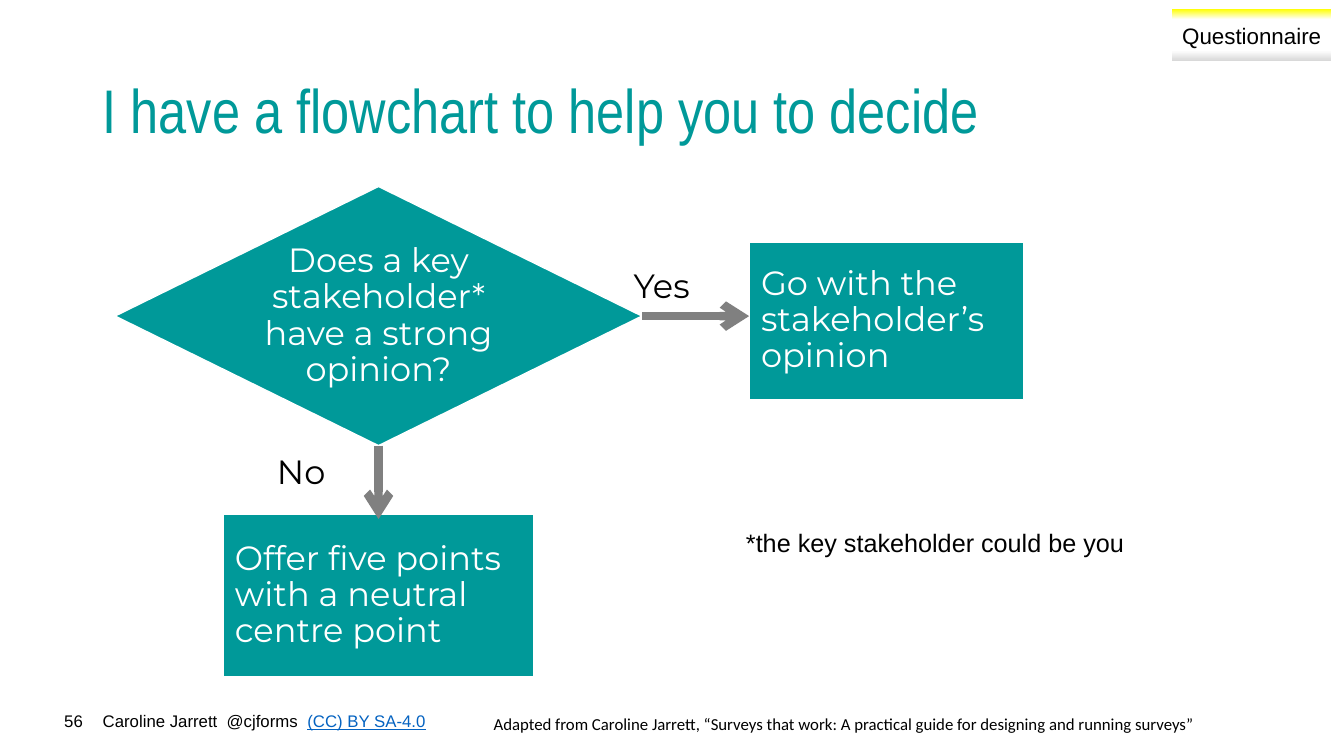
from lxml import etree
from pptx import Presentation
from pptx.dml.color import RGBColor
from pptx.enum.shapes import MSO_CONNECTOR, MSO_SHAPE
from pptx.enum.text import MSO_ANCHOR, PP_ALIGN
from pptx.oxml.ns import qn
from pptx.util import Cm, Pt

STRAIGHT = MSO_CONNECTOR.STRAIGHT
DIAMOND, RECTANGLE = MSO_SHAPE.DIAMOND, MSO_SHAPE.RECTANGLE
TOP, MIDDLE = MSO_ANCHOR.TOP, MSO_ANCHOR.MIDDLE
LEFT, CENTER, RIGHT = PP_ALIGN.LEFT, PP_ALIGN.CENTER, PP_ALIGN.RIGHT

TEAL, GREY, WHITE, BLACK, LINK_BLUE = "009999", "808080", "FFFFFF", "000000", "0563C1"
TAG_STOPS = [(0, "FFFF00"), (20, WHITE), (80, WHITE), (100, "D9D9D9")]


def rgb(hex_colour):
    return RGBColor.from_string(hex_colour)


def add_run(paragraph, words, font, size, colour, underline=None):
    run = paragraph.add_run()
    run.text = words
    run.font.name = font
    run.font.size = Pt(size)
    run.font.color.rgb = rgb(colour)
    run.font.underline = underline
    return run


def add_label(slide, box, words, font, size, colour=BLACK, align=LEFT, anchor=TOP, wrap=True):
    label = slide.shapes.add_textbox(*map(Cm, box))
    frame = label.text_frame
    frame.word_wrap = wrap
    frame.vertical_anchor = anchor
    paragraph = frame.paragraphs[0]
    paragraph.alignment = align
    add_run(paragraph, words, font, size, colour)
    return paragraph


def add_step(slide, preset, box, lines, align, inset):
    step = slide.shapes.add_shape(preset, *map(Cm, box))
    step.shadow.inherit = False
    step.fill.solid()
    step.fill.fore_color.rgb = rgb(TEAL)
    step.line.color.rgb = rgb(WHITE)
    step.line.width = Pt(1)
    frame = step.text_frame
    frame.word_wrap = True
    frame.vertical_anchor = MIDDLE
    frame.margin_left = frame.margin_right = Cm(inset)
    frame.margin_top = frame.margin_bottom = Cm(inset)
    paragraph = frame.paragraphs[0]
    paragraph.alignment = align
    paragraph.line_spacing = 0.9
    for index, line in enumerate(lines):
        if index:
            paragraph.add_line_break()
        add_run(paragraph, line, "Montserrat", 24, WHITE)


def add_arrow(slide, start, end):
    arrow = slide.shapes.add_connector(STRAIGHT, *map(Cm, start + end))
    arrow.line.color.rgb = rgb(GREY)
    arrow.line.width = Pt(6)
    etree.SubElement(arrow.line._get_or_add_ln(), qn("a:tailEnd"), type="arrow")
    etree.SubElement(arrow._element.spPr, qn("a:effectLst"))


def fill_gradient(shape, stops):
    shape.fill.gradient()
    shape.fill.gradient_angle = 270
    stop_list = shape._element.spPr.find(qn("a:gradFill")).find(qn("a:gsLst"))
    for old_stop in list(stop_list):
        stop_list.remove(old_stop)
    for percent, colour in stops:
        stop = etree.SubElement(stop_list, qn("a:gs"), pos=str(percent * 1000))
        etree.SubElement(stop, qn("a:srgbClr"), val=colour)


def build_title(slide, box):
    title = add_label(slide, box, "I have a flowchart to help you to decide",
                      "Arial Narrow", 44, TEAL, anchor=MIDDLE)
    title.line_spacing = 0.9


def build_topic_tag(slide, box):
    left, top, width, height = box
    tag = slide.shapes.add_shape(RECTANGLE, *map(Cm, box))
    tag.shadow.inherit = False
    tag.line.fill.background()
    fill_gradient(tag, TAG_STOPS)
    add_label(slide, (left, top + 0.2, width, height - 0.36), "Questionnaire",
              "Arial", 16, align=CENTER, wrap=False)


def build_flowchart(slide, box):
    left, top, width, height = box
    question_width, question_height = 13.28, 6.53
    advice_width, advice_height = 6.92, 3.97
    offer_width, offer_height = 7.84, 4.11
    centre_x = left + question_width / 2
    centre_y = top + question_height / 2
    question_right = left + question_width
    question_bottom = top + question_height
    advice_left = left + width - advice_width
    offer_top = top + height - offer_height

    add_step(slide, DIAMOND, (left, top, question_width, question_height),
             ["Does a key stakeholder* have a strong opinion?"], CENTER, 0)
    add_step(slide, RECTANGLE, (advice_left, top + 1.4, advice_width, advice_height),
             ["Go with the ", "stakeholder’s opinion"], LEFT, 0.3)
    add_step(slide, RECTANGLE,
             (centre_x - offer_width / 2, offer_top, offer_width, offer_height),
             ["Offer five points with a neutral centre point"], LEFT, 0.3)

    add_arrow(slide, (question_right, centre_y), (advice_left, centre_y))
    add_arrow(slide, (centre_x, question_bottom), (centre_x, offer_top + 0.13))
    add_label(slide, (question_right - 0.46, centre_y - 1.41, 1.98, 1.27), "Yes",
              "Montserrat", 24, wrap=False)
    add_label(slide, (centre_x - 2.81, question_bottom, 1.75, 1.27), "No",
              "Montserrat", 24, wrap=False)
    add_label(slide, (advice_left - 0.33, offer_top + 0.21, 10.13, 1.02),
              "*the key stakeholder could be you", "Arial", 18, wrap=False)


def build_footer(slide, box):
    left, top, width, height = box
    number_width, credit_width, source_left = 2.34, 9.8, 12.19
    add_label(slide, (left, top, number_width, height), "56", "Arial", 12, align=RIGHT)
    credit = add_label(slide, (left + number_width, top, credit_width, height),
                       "Caroline Jarrett  @cjforms  ", "Arial", 12)
    add_run(credit, "(CC) BY SA-4.0", "Arial", 12, LINK_BLUE, underline=True)
    add_label(slide, (left + source_left, top + 0.08, width - source_left, height),
              "Adapted from Caroline Jarrett, “Surveys that work: "
              "A practical guide for designing and running surveys”", "Calibri", 12)


def main():
    deck = Presentation()
    deck.slide_width, deck.slide_height = Cm(33.87), Cm(19.05)
    slide = deck.slides.add_slide(deck.slide_layouts[6])
    build_title(slide, (2.34, 1.02, 29.21, 3.68))
    build_flowchart(slide, (2.9, 4.7, 22.9, 12.36))
    build_footer(slide, (0, 17.78, 30.6, 0.76))
    build_topic_tag(slide, (29.54, 0.23, 4.01, 1.3))
    deck.save("out.pptx")


if __name__ == "__main__":
    main()
